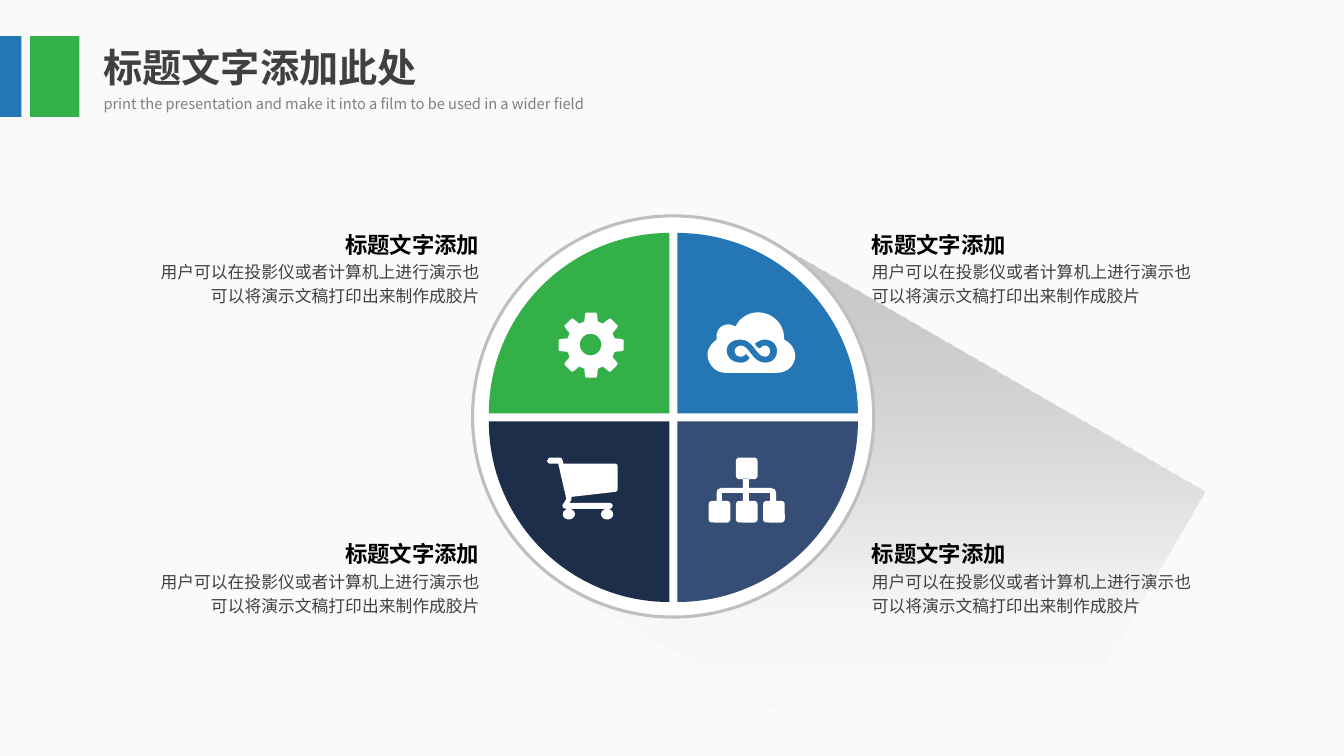
import math

from lxml import etree
from pptx import Presentation
from pptx import util as u
from pptx.dml.color import RGBColor
from pptx.enum import shapes, text
from pptx.oxml import ns

FONT = "Noto Sans CJK SC"
GREEN, BLUE, NAVY, SLATE, WHITE = "33B048", "2576B5", "1D2E4B", "364D76", "FFFFFF"
AUTO = shapes.MSO_SHAPE
ALIGN = text.PP_ALIGN

presentation = Presentation()
presentation.slide_width = u.Cm(33.87)
presentation.slide_height = u.Cm(19.05)
slide = presentation.slides.add_slide(presentation.slide_layouts[6])


def paint(fill, color):
    fill.solid()
    fill.fore_color.rgb = RGBColor.from_string(color)


def add_text(words, left, top, width, height, size, color, bold=False,
             align=ALIGN.LEFT, spacing=1.2):
    box = slide.shapes.add_textbox(u.Cm(left), u.Cm(top), u.Cm(width), u.Cm(height))
    frame = box.text_frame
    frame.word_wrap = True
    frame.auto_size = text.MSO_AUTO_SIZE.SHAPE_TO_FIT_TEXT
    paragraph = frame.paragraphs[0]
    paragraph.alignment = align
    paragraph.line_spacing = spacing
    run = paragraph.add_run()
    run.text = words
    run.font.size = u.Pt(size)
    run.font.bold = bold
    paint(run.font.fill, color)
    run.font.name = FONT
    east_asian = etree.SubElement(run.font._element, ns.qn("a:ea"))
    east_asian.set("typeface", FONT)


paint(slide.background.fill, "FAFAFA")

long_shadow = slide.shapes.add_shape(AUTO.RECTANGLE, u.Cm(16.23), u.Cm(8.59), u.Cm(12.42), u.Cm(10.16))
long_shadow.rotation = 30
long_shadow.fill.gradient()
gradient = long_shadow._element.spPr.find(ns.qn("a:gradFill"))
for child in list(gradient):
    gradient.remove(child)
stops = etree.SubElement(gradient, ns.qn("a:gsLst"))
for position, color, opacity in [(0, "000000", 20), (61, "F2F2F2", 34), (100, "F2F2F2", 0)]:
    stop = etree.SubElement(stops, ns.qn("a:gs"), pos=str(position * 1000))
    stop_color = etree.SubElement(stop, ns.qn("a:srgbClr"), val=color)
    etree.SubElement(stop_color, ns.qn("a:alpha"), val=str(opacity * 1000))
etree.SubElement(gradient, ns.qn("a:lin"), ang="3600000", scaled="0")

ring = slide.shapes.add_shape(AUTO.OVAL, u.Cm(11.91), u.Cm(5.44), u.Cm(10.11), u.Cm(10.11))
paint(ring.fill, WHITE)

for column, row, rotation, color in [(0, 0, 0, GREEN), (1, 0, 90, BLUE),
                                     (0, 1, 270, NAVY), (1, 1, 180, SLATE)]:
    wedge = slide.shapes.add_shape(AUTO.PIE_WEDGE, u.Cm(12.32 + 4.75 * column),
                                   u.Cm(5.87 + 4.75 * row), u.Cm(4.55), u.Cm(4.55))
    wedge.rotation = rotation
    paint(wedge.fill, color)

turn = [(math.cos(math.radians(a)), math.sin(math.radians(a))) for a in range(0, 360, 10)]

gear_rim = []
for tooth in range(0, 360, 45):
    for offset, radius in [(-16, 24.3), (-11, 31.3), (-9, 32.7), (9, 32.7), (11, 31.3), (16, 24.3)]:
        angle = math.radians(tooth + offset)
        gear_rim.append((32.5 + radius * math.cos(angle), 32.5 + radius * math.sin(angle)))
gear = [gear_rim, [(32 + 10.7 * x, 32 + 10.7 * y) for x, y in turn]]

cloud_curves = [
    [(87, 43), (87, 53, 79, 60, 69, 60), (69, 60, 17, 60, 17, 60), (8, 60, 0, 51, 0, 42),
     (0, 36, 4, 31, 9, 27), (9, 26, 9, 25, 9, 24), (9, 18, 13, 12, 21, 12),
     (23, 12, 25, 13, 28, 14), (31, 6, 41, 0, 50, 0), (65, 0, 76, 12, 76, 25),
     (76, 26, 76, 26, 76, 27), (82, 30, 87, 36, 87, 43)],
    [(33, 50), (36, 50, 40, 49, 42, 45), (41, 44, 40, 43, 38, 41), (37, 43, 35, 44, 33, 44),
     (30, 44, 27, 42, 27, 38), (27, 36, 30, 33, 33, 33), (42, 33, 44, 50, 57, 50),
     (65, 50, 69, 45, 69, 38), (69, 31, 63, 27, 57, 27), (53, 27, 50, 29, 47, 31),
     (48, 33, 49, 35, 52, 36), (53, 35, 55, 33, 57, 33), (60, 33, 62, 36, 62, 38),
     (62, 42, 60, 44, 57, 44), (48, 44, 46, 27, 33, 27), (25, 27, 19, 31, 19, 38),
     (19, 45, 25, 50, 33, 50)],
]
cloud = []
for start, *curves in cloud_curves:
    outline = [start]
    for x1, y1, x2, y2, x3, y3 in curves:
        x0, y0 = outline[-1]
        for step in range(1, 9):
            t = step / 8
            a, b, c, d = (1 - t) ** 3, 3 * t * (1 - t) ** 2, 3 * t * t * (1 - t), t ** 3
            outline.append((a * x0 + b * x1 + c * x2 + d * x3, a * y0 + b * y1 + c * y2 + d * y3))
    cloud.append(outline)

cart = [[(70, 31), (69.5, 33), (68, 34), (24, 39), (24, 42), (22, 45), (62, 45), (64.5, 46),
         (65, 48), (64, 50), (62, 51), (19, 51), (16, 50), (15, 47.5), (19, 41), (11, 6), (2, 6),
         (0.5, 5), (0, 3), (2, 0), (13, 0), (15, 1.5), (16, 6), (68, 6), (69.5, 7), (70, 9)]]
for center in (21.5, 59.5):
    cart.append([(center + 6 * x, 56.2 + 5.2 * y) for x, y in turn])

hierarchy = [[(8, 43), (8, 35), (9, 31.5), (13, 30), (34, 30), (34, 21), (40, 21), (40, 30),
              (61, 30), (65.5, 31.5), (67, 35), (67, 43), (61, 43), (61, 35), (40, 35),
              (40, 43), (34, 43), (34, 35), (13, 35), (13, 43)]]
for left, top in [(27, 0), (0, 43), (27, 43), (54, 43)]:
    hierarchy.append([(left + 10.75 + math.copysign(7.25, round(x, 6)) + 3.5 * x,
                       top + 10.75 + math.copysign(7.25, round(y, 6)) + 3.5 * y) for x, y in turn])

for left, top, outlines in [(14.07, 7.87, gear), (17.83, 7.87, cloud),
                            (13.79, 11.53, cart), (17.86, 11.53, hierarchy)]:
    builder = None
    for outline in outlines:
        points = [(x * 25.4, y * 25.4) for x, y in outline]
        if builder is None:
            builder = slide.shapes.build_freeform(*points[0], scale=u.Cm(0.001))
        else:
            builder.move_to(*points[0])
        builder.add_line_segments(points[1:], close=True)
    icon = builder.convert_to_shape(u.Cm(left), u.Cm(top))
    paint(icon.fill, WHITE)

add_text("标题文字添加此处", 2.36, 0.97, 9.14, 1.45, 28, "404040", bold=True, spacing=1.0)
add_text("print the presentation and make it into a film to be used in a wider field",
         2.36, 2.18, 13.56, 0.76, 10.5, "808080")

for left, width, color in [(0.76, 1.24, GREEN), (0, 0.54, BLUE)]:
    bar = slide.shapes.add_shape(AUTO.RECTANGLE, u.Cm(left), u.Cm(0.91), u.Cm(width), u.Cm(2.04))
    paint(bar.fill, color)

for body_left, title_left, align in [(21.72, 21.72, ALIGN.JUSTIFY), (3.78, 6.64, ALIGN.RIGHT)]:
    for top in (5.56, 13.36):
        add_text("用户可以在投影仪或者计算机上进行演示也可以将演示文稿打印出来制作成胶片",
                 body_left, top + 0.81, 8.56, 1.5, 12, "404040", align=align)
        add_text("标题文字添加", title_left, top, 5.69, 1.02, 16, "000000", bold=True, align=align)

for shape in slide.shapes:
    shape.shadow.inherit = False
    shape.line.fill.background()
paint(ring.line.fill, "BFBFBF")
ring.line.width = u.Pt(2.25)

presentation.save("out.pptx")
